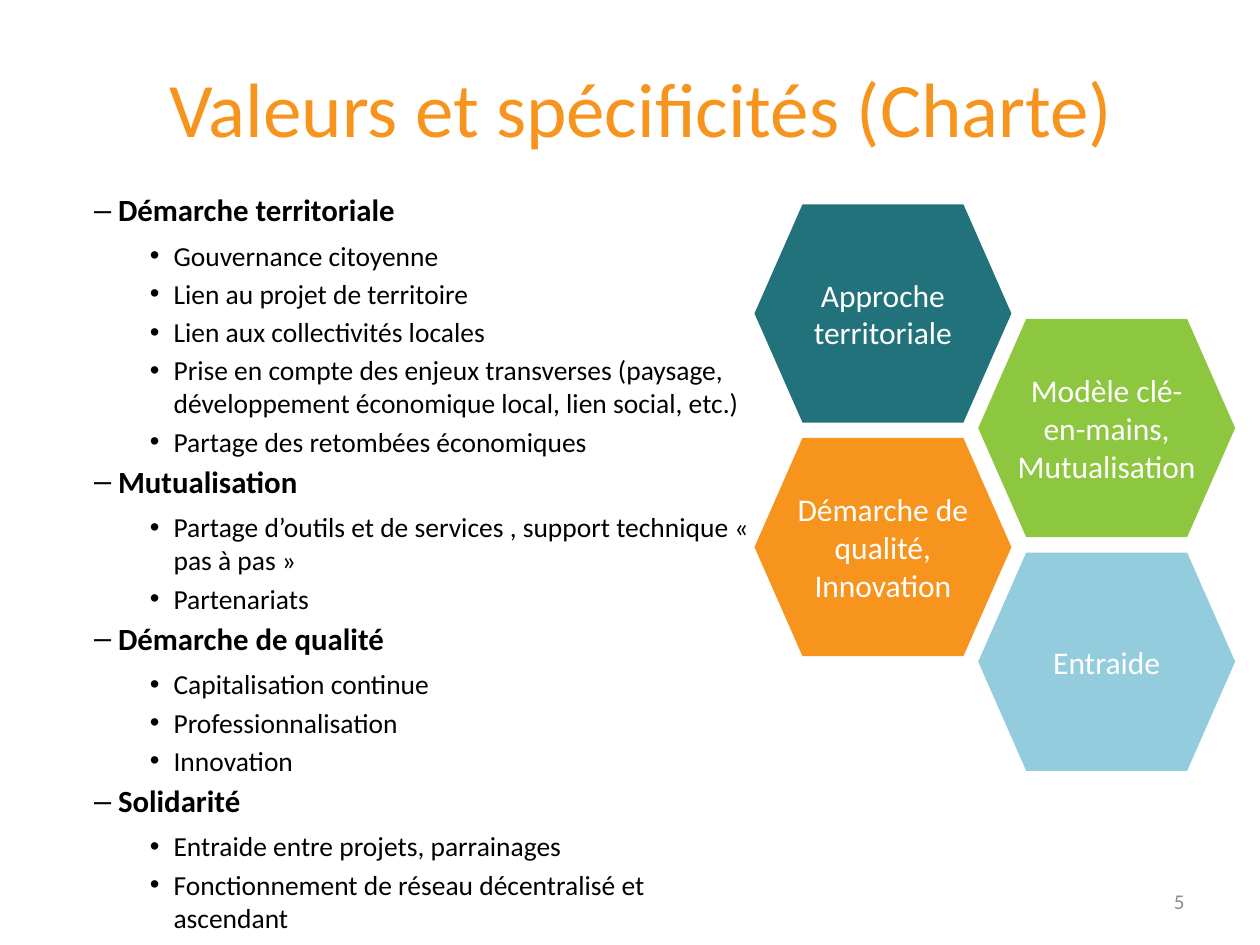
"""Build the slide on values and specifics of the charter."""
from lxml import etree
from pptx import Presentation
from pptx import util as u
from pptx.dml.color import RGBColor
from pptx.enum import shapes, text
from pptx.oxml.ns import qn


def color(value):
    return RGBColor.from_string(value)


def write(frame, content, size=18, ink="FFFFFF", bold=False, align=text.PP_ALIGN.CENTER,
          bullet=None, level=0, margin=0, before=0, after=0, first=False):
    para = frame.paragraphs[0] if first else frame.add_paragraph()
    para.alignment, para.level = align, level
    para.space_before, para.space_after = u.Pt(0 if first else before), u.Pt(after)
    if bullet:
        props = para._p.get_or_add_pPr()
        props.set("marL", str(u.Cm(margin)))
        props.set("indent", str(u.Cm(-0.48)))
        etree.SubElement(props, qn("a:buFont")).set("typeface", "Arial")
        etree.SubElement(props, qn("a:buChar")).set("char", bullet)
    span = para.add_run()
    span.text = content
    span.font.name, span.font.size, span.font.bold = "Calibri", u.Pt(size), bold
    span.font.color.rgb = color(ink)


deck = Presentation()
deck.slide_width, deck.slide_height = u.Cm(25.4), u.Cm(19.05)
page = deck.slides.add_slide(deck.slide_layouts[5])

title = page.shapes.title
title.left, title.top, title.width, title.height = u.Cm(1.5), u.Cm(0.56), u.Cm(22.86), u.Cm(3.18)
title.text_frame.vertical_anchor = text.MSO_ANCHOR.MIDDLE
write(title.text_frame, "Valeurs et spécificités (Charte)", size=44, ink="F7941E", first=True)

values = {
    "Démarche territoriale": [
        "Gouvernance citoyenne",
        "Lien au projet de territoire",
        "Lien aux collectivités locales",
        "Prise en compte des enjeux transverses (paysage, développement économique local, "
        "lien social, etc.)",
        "Partage des retombées économiques",
    ],
    "Mutualisation": [
        "Partage d’outils et de services , support technique « pas à pas »",
        "Partenariats",
    ],
    "Démarche de qualité": ["Capitalisation continue", "Professionnalisation", "Innovation"],
    "Solidarité": [
        "Entraide entre projets, parrainages",
        "Fonctionnement de réseau décentralisé et ascendant",
    ],
}
body = page.shapes.add_textbox(u.Cm(1.27), u.Cm(3.73), u.Cm(14.22), u.Cm(14)).text_frame
body.word_wrap = True
for index, (heading, points) in enumerate(values.items()):
    write(body, heading, size=17.6, ink="000000", bold=True, align=text.PP_ALIGN.LEFT,
          bullet="–", level=1, margin=0.86, before=3, after=3, first=index == 0)
    for point in points:
        write(body, point, size=15.7, ink="000000", align=text.PP_ALIGN.LEFT,
              bullet="•", level=2, margin=1.98, before=3)

hexagons = [
    (0, 0, "22727C", ["Approche territoriale"]),
    (0, 1, "8DC63F", ["Modèle clé-en-mains,", "Mutualisation"]),
    (1, 0, "F7941E", ["Démarche de qualité, Innovation"]),
    (1, 1, "93CDDD", ["Entraide"]),
]
for row, column, fill, lines in hexagons:
    hexagon = page.shapes.add_shape(
        shapes.MSO_SHAPE.HEXAGON, u.Cm(15.21 + 4.51 * column),
        u.Cm(4.12 + 4.71 * row + 2.31 * column), u.Cm(5.18), u.Cm(4.4))
    hexagon.adjustments[0] = 0.22
    hexagon.shadow.inherit = False
    hexagon.fill.solid()
    hexagon.fill.fore_color.rgb = color(fill)
    hexagon.line.fill.background()
    frame = hexagon.text_frame
    frame.word_wrap, frame.vertical_anchor = True, text.MSO_ANCHOR.MIDDLE
    frame.margin_left = frame.margin_right = u.Cm(0 if len(lines) > 1 else 0.1)
    frame.margin_top = frame.margin_bottom = u.Cm(0.1)
    for index, line in enumerate(lines):
        write(frame, line, first=index == 0)

number = page.shapes.add_textbox(u.Cm(18.2), u.Cm(17.66), u.Cm(5.93), u.Cm(1.01)).text_frame
number.word_wrap, number.vertical_anchor = True, text.MSO_ANCHOR.MIDDLE
write(number, "5", size=12, ink="8C8C8C", align=text.PP_ALIGN.RIGHT, first=True)

deck.save("out.pptx")
